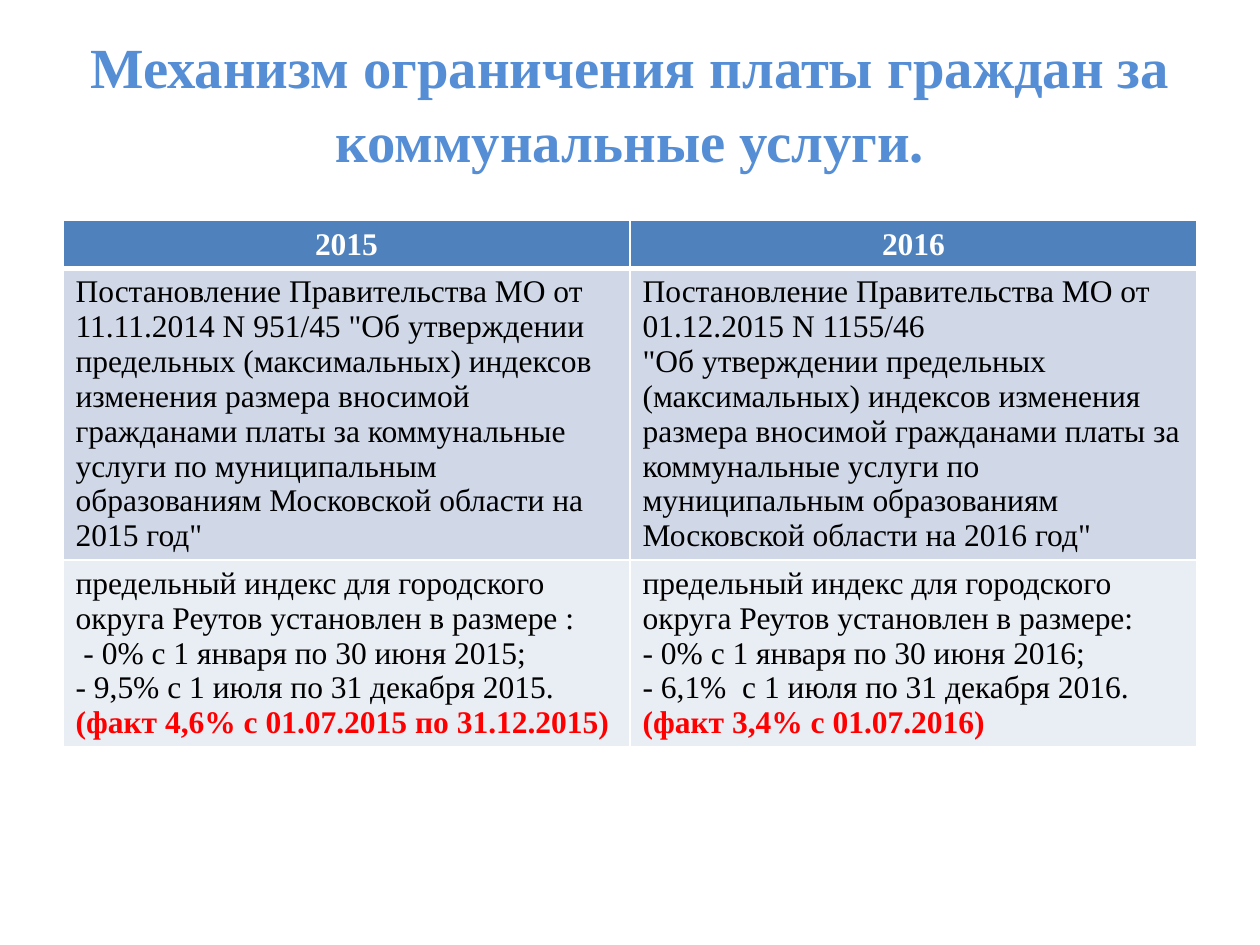
from lxml.etree import SubElement
from pptx import Presentation
from pptx.dml.color import RGBColor
from pptx.enum.text import MSO_ANCHOR, PP_ALIGN
from pptx.oxml.ns import qn
from pptx.util import Cm, Pt

TITLE_BLUE = RGBColor(0x55, 0x8E, 0xD5)
HEADER_BLUE = RGBColor(0x4F, 0x81, 0xBD)
BAND_DARK = RGBColor(0xD0, 0xD8, 0xE8)
BAND_LIGHT = RGBColor(0xE9, 0xED, 0xF4)
WHITE = RGBColor(0xFF, 0xFF, 0xFF)
BLACK = RGBColor(0x00, 0x00, 0x00)
RED = RGBColor(0xFF, 0x00, 0x00)

HEADING = "Механизм ограничения платы граждан за коммунальные услуги."
SUBJECT = (
    '"Об утверждении предельных (максимальных) индексов изменения размера '
    "вносимой гражданами платы за коммунальные услуги по муниципальным "
    'образованиям Московской области на {} год"'
)
DECREE = "Постановление Правительства МО от "
LIMIT = "предельный индекс для городского округа Реутов установлен в размере"
ROWS = [
    [["2015"], ["2016"]],
    [
        [DECREE + "11.11.2014 N 951/45 " + SUBJECT.format(2015)],
        [DECREE + "01.12.2015 N 1155/46\v" + SUBJECT.format(2016)],
    ],
    [
        [
            LIMIT + " :\v - 0% с 1 января по 30 июня 2015;",
            "- 9,5% с 1 июля по 31 декабря 2015.",
            "(факт 4,6% с 01.07.2015 по 31.12.2015)",
        ],
        [
            LIMIT + ":",
            "- 0% с 1 января по 30 июня 2016;",
            "- 6,1%  с 1 июля по 31 декабря 2016.",
            "(факт 3,4% с 01.07.2016)",
        ],
    ],
]
ROW_HEIGHTS = [0.94, 5.82, 3.73]
ROW_FILLS = [HEADER_BLUE, BAND_DARK, BAND_LIGHT]


class SlideWriter:
    font_name = "Times New Roman"

    def __init__(self, slide):
        self.slide = slide

    def format_runs(self, paragraph, size, color, bold):
        for run in paragraph.runs:
            run.font.name = self.font_name
            run.font.size = Pt(size)
            run.font.bold = bold
            run.font.color.rgb = color

    def title(self, text, left, top, width, height):
        heading = self.slide.shapes.title
        heading.left, heading.top = Cm(left), Cm(top)
        heading.width, heading.height = Cm(width), Cm(height)
        frame = heading.text_frame
        frame.text = text
        frame.word_wrap = True
        frame.vertical_anchor = MSO_ANCHOR.MIDDLE
        frame.margin_bottom = Cm(0.4)
        paragraph = frame.paragraphs[0]
        paragraph.alignment = PP_ALIGN.CENTER
        paragraph.line_spacing = 1.1
        self.format_runs(paragraph, 32.4, TITLE_BLUE, True)

    def borders(self, cell, bottom_width):
        properties = cell._tc.get_or_add_tcPr()
        for side, width in (("L", 1), ("R", 1), ("T", 1), ("B", bottom_width)):
            line = SubElement(properties, qn(f"a:ln{side}"), w=str(Pt(width)))
            fill = SubElement(line, qn("a:solidFill"))
            SubElement(fill, qn("a:srgbClr"), val=str(WHITE))

    def cell(self, cell, lines, fill, is_header):
        self.borders(cell, 3 if is_header else 1)
        cell.fill.solid()
        cell.fill.fore_color.rgb = fill
        frame = cell.text_frame
        for index, line in enumerate(lines):
            paragraph = frame.add_paragraph() if index else frame.paragraphs[0]
            paragraph.text = line
            is_fact = line.startswith("(факт")
            color = WHITE if is_header else RED if is_fact else BLACK
            paragraph.alignment = PP_ALIGN.CENTER if is_header else PP_ALIGN.LEFT
            self.format_runs(paragraph, 18, color, is_header or is_fact)

    def table(self, rows, heights, fills, left, top, width):
        table = self.slide.shapes.add_table(
            len(rows), len(rows[0]), Cm(left), Cm(top), Cm(width), Cm(sum(heights))
        ).table
        for row_index, (row, height, fill) in enumerate(zip(rows, heights, fills)):
            table.rows[row_index].height = Cm(height)
            for column_index, lines in enumerate(row):
                cell = table.cell(row_index, column_index)
                self.cell(cell, lines, fill, row_index == 0)


def main():
    presentation = Presentation()
    presentation.slide_width, presentation.slide_height = Cm(25.4), Cm(19.05)
    slide = presentation.slides.add_slide(presentation.slide_layouts[5])
    writer = SlideWriter(slide)
    writer.title(HEADING, 1.27, 0.74, 22.86, 2.8)
    writer.table(ROWS, ROW_HEIGHTS, ROW_FILLS, 1.27, 4.45, 22.86)
    presentation.save("out.pptx")


if __name__ == "__main__":
    main()
